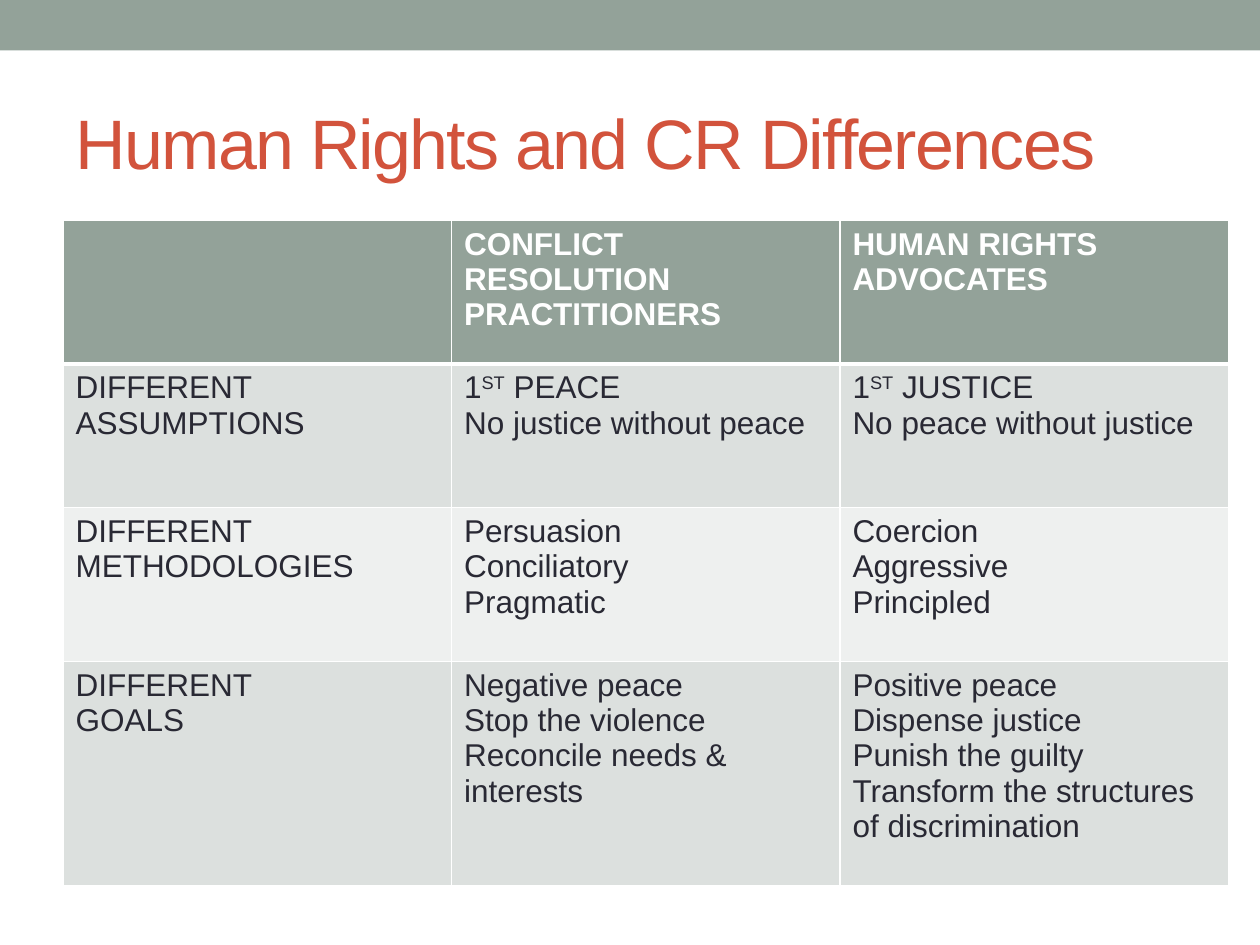
"""Build a slide comparing conflict resolution practitioners and human rights advocates."""
import lxml.etree
import pptx
import pptx.dml.color
import pptx.enum.shapes
import pptx.enum.text
import pptx.oxml.ns
import pptx.util

SAGE, RUST, INK, WHITE = "93A299", "D2533C", "292934", "FFFFFF"
BANDS = ("DCE0DE", "EEF0EF")
ROW_HEIGHTS = (1.14, 1.14, 1.22, 1.78)
COMPARISON = (
    ("", "CONFLICT RESOLUTION\nPRACTITIONERS", "HUMAN RIGHTS\nADVOCATES"),
    ("DIFFERENT\nASSUMPTIONS",
     "1^ST^ PEACE\nNo justice without peace",
     "1^ST^ JUSTICE\nNo peace without justice"),
    ("DIFFERENT\nMETHODOLOGIES",
     "Persuasion\nConciliatory\nPragmatic",
     "Coercion\nAggressive\nPrincipled"),
    ("DIFFERENT\nGOALS",
     "Negative peace\nStop the violence\nReconcile needs & interests",
     "Positive peace\nDispense justice\nPunish the guilty\n"
     "Transform the structures of discrimination"),
)


def rgb(code):
    return pptx.dml.color.RGBColor.from_string(code)


class SlideBuilder:
    def __init__(self, deck):
        self.width, self.height = deck.slide_width, deck.slide_height
        self.font = "Arial"
        self.slide = deck.slides.add_slide(deck.slide_layouts[5])

    def box(self, left, top, width, height):
        return (round(left * self.width), round(top * self.height),
                round(width * self.width), round(height * self.height))

    def style(self, run, size, color, bold=False):
        run.font.name = self.font
        run.font.size = pptx.util.Pt(size)
        run.font.bold = bold
        run.font.color.rgb = rgb(color)

    def bar(self, share, color):
        bar = self.slide.shapes.add_shape(
            pptx.enum.shapes.MSO_SHAPE.RECTANGLE, *self.box(0, 0, 1, share))
        bar.shadow.inherit = False
        bar.fill.solid()
        bar.fill.fore_color.rgb = rgb(color)
        bar.line.fill.background()

    def title(self, text, *shares):
        title = self.slide.shapes.title
        title.left, title.top, title.width, title.height = self.box(*shares)
        frame = title.text_frame
        frame.text = text
        frame.auto_size = pptx.enum.text.MSO_AUTO_SIZE.NONE
        frame.vertical_anchor = pptx.enum.text.MSO_ANCHOR.MIDDLE
        heading = frame.paragraphs[0]
        heading.alignment = pptx.enum.text.PP_ALIGN.LEFT
        self.style(heading.runs[0], 40, RUST)
        heading.runs[0].font._element.set("spc", "-100")

    def borders(self, cell, **widths):
        properties = cell._tc.get_or_add_tcPr()
        for side in "LRTB":
            line = lxml.etree.SubElement(
                properties, pptx.oxml.ns.qn(f"a:ln{side}"),
                w=str(pptx.util.Pt(widths.get(side, 1))))
            fill = lxml.etree.SubElement(line, pptx.oxml.ns.qn("a:solidFill"))
            lxml.etree.SubElement(fill, pptx.oxml.ns.qn("a:srgbClr"), val=WHITE)

    def cell_text(self, cell, text, color, bold):
        frame = cell.text_frame
        for index, wording in enumerate(text.split("\n")):
            paragraph = frame.add_paragraph() if index else frame.paragraphs[0]
            for position, part in enumerate(wording.split("^")):
                run = paragraph.add_run()
                run.text = part
                self.style(run, 18, color, bold)
                if position % 2:
                    run.font._element.set("baseline", "30000")

    def table(self, rows, heights, *shares):
        table = self.slide.shapes.add_table(
            len(rows), len(rows[0]), *self.box(*shares)).table
        for row, height in zip(table.rows, heights):
            row.height = pptx.util.Inches(height)
        for r, texts in enumerate(rows):
            header = r == 0
            edges = {"B": 3} if header else {"T": 3} if r == 1 else {}
            for c, text in enumerate(texts):
                cell = table.cell(r, c)
                self.borders(cell, **edges)
                cell.fill.solid()
                cell.fill.fore_color.rgb = rgb(SAGE if header else BANDS[(r - 1) % 2])
                if text:
                    self.cell_text(cell, text, WHITE if header else INK, header)


def main():
    deck = pptx.Presentation()
    deck.slide_width = pptx.util.Inches(10)
    deck.slide_height = pptx.util.Inches(7.5)
    builder = SlideBuilder(deck)
    builder.bar(0.4 / 7.5, SAGE)
    builder.title("Human Rights and CR Differences", 0.05, 0.58 / 7.5, 0.9, 1.08 / 7.5)
    builder.table(COMPARISON, ROW_HEIGHTS,
                  0.05, 1.75 / 7.5, 0.925, sum(ROW_HEIGHTS) / 7.5)
    deck.save("out.pptx")


if __name__ == "__main__":
    main()
